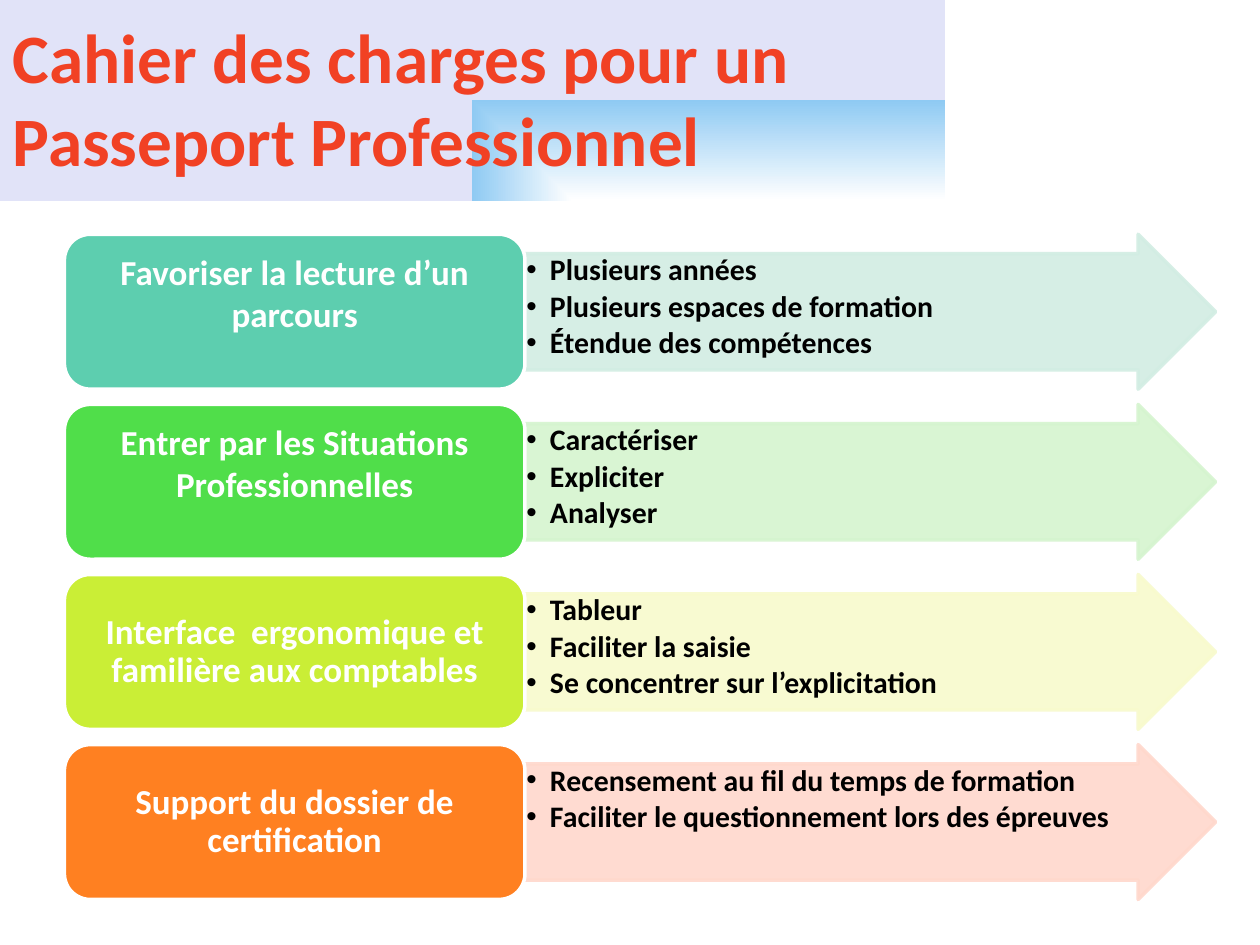
from lxml import etree
from pptx import Presentation
from pptx.dml.color import RGBColor
from pptx.enum import shapes, text
from pptx.oxml import parse_xml
from pptx.oxml.ns import nsdecls, qn
from pptx.util import Pt


def paint(fmt, color):
    """Set a solid colour on a fill."""
    fmt.solid()
    fmt.fore_color.rgb = RGBColor.from_string(color)


def write(para, words, size, color):
    run = para.add_run()
    run.text = words
    font = run.font
    font.name, font.size, font.bold = "Calibri", Pt(size), True
    paint(font.fill, color)


ROWS = [
    ("Favoriser la lecture d’un parcours", "5DCEAF", "D2EDE3", 1, 25,
     ["Plusieurs années", "Plusieurs espaces de formation", "Étendue des compétences"]),
    ("Entrer par les Situations Professionnelles", "50DE4A", "D5F4CF", 1, 25,
     ["Caractériser", "Expliciter", "Analyser"]),
    ("Interface  ergonomique et familière aux comptables", "CAEE36", "F8FACD", 0.9, 3,
     ["Tableur", "Faciliter la saisie", "Se concentrer sur l’explicitation"]),
    ("Support du dossier de certification", "FF8021", "FFD8CC", 0.9, 3,
     ["Recensement au fil du temps de formation",
      "Faciliter le questionnement lors des épreuves"]),
]
TOP, STEP, HIGH = 133.9, 97.2, 88.5

prs = Presentation()
prs.slide_width, prs.slide_height = Pt(720), Pt(540)
slide = prs.slides.add_slide(prs.slide_layouts[5])

# Title band, behind the title
band = slide.shapes.add_shape(shapes.MSO_SHAPE.RECTANGLE, 0, 0, Pt(540), Pt(114.7))
band.shadow.inherit = False
band.line.fill.background()
stops = [(0, "FFFFFF"), (100, "8FCAF3"), (100, "C1C7F2"), (100, "E1E3F8")]
marks = "".join(f'<a:gs pos="{pos * 1000}"><a:srgbClr val="{color}"/></a:gs>'
                for pos, color in stops)
band.fill.background()
empty = band.element.spPr.find(qn("a:noFill"))
empty.getparent().replace(empty, parse_xml(
    f'<a:gradFill {nsdecls("a")}><a:gsLst>{marks}</a:gsLst>'
    '<a:path path="rect"><a:fillToRect l="100000" t="100000"/></a:path></a:gradFill>'))
slide.shapes.element.insert(2, band.element)

title = slide.shapes.title
title.left, title.top, title.width, title.height = 0, 0, Pt(530), Pt(111.6)
frame = title.text_frame
frame.auto_size = text.MSO_AUTO_SIZE.NONE
frame.word_wrap = True
frame.vertical_anchor = text.MSO_ANCHOR.MIDDLE
para = frame.paragraphs[0]
para.alignment = text.PP_ALIGN.LEFT
write(para, "Cahier des charges pour un Passeport Professionnel", 39.6, "F14124")

for i, (label, dark, pale, lead, foot, items) in enumerate(ROWS):
    top = Pt(TOP + i * STEP)

    arrow = slide.shapes.add_shape(shapes.MSO_SHAPE.RIGHT_ARROW,
                                   Pt(300), top, Pt(394.6), Pt(HIGH))
    arrow.adjustments[0], arrow.adjustments[1] = 0.75, 0.5
    paint(arrow.fill, pale)
    paint(arrow.line.fill, pale)
    for tone in arrow.element.spPr.iter(qn("a:srgbClr")):
        etree.SubElement(tone, qn("a:alpha"), val="90000")
    frame = arrow.text_frame
    frame.vertical_anchor = text.MSO_ANCHOR.TOP
    frame.margin_left = frame.margin_right = Pt(0.8)
    frame.margin_top = frame.margin_bottom = Pt(0.8)
    for j, item in enumerate(items):
        para = frame.add_paragraph() if j else frame.paragraphs[0]
        para.alignment = text.PP_ALIGN.LEFT
        para.line_spacing, para.space_after = 0.9, Pt(2.5)
        props = para._p.get_or_add_pPr()
        props.set("marL", str(Pt(13.5)))
        props.set("indent", str(Pt(-13.5)))
        etree.SubElement(props, qn("a:buFont"), typeface="Arial")
        etree.SubElement(props, qn("a:buChar"), char="•")
        write(para, item, 17, "000000")

    box = slide.shapes.add_shape(shapes.MSO_SHAPE.ROUNDED_RECTANGLE,
                                 Pt(36.8), top, Pt(263.2), Pt(HIGH))
    paint(box.fill, dark)
    paint(box.line.fill, "FFFFFF")
    frame = box.text_frame
    frame.vertical_anchor = text.MSO_ANCHOR.MIDDLE
    frame.margin_left = frame.margin_right = Pt(6)
    frame.margin_top, frame.margin_bottom = Pt(3), Pt(foot)
    para = frame.paragraphs[0]
    para.alignment = text.PP_ALIGN.CENTER
    para.line_spacing = lead
    write(para, label, 20, "FFFFFF")

    for shape in (arrow, box):
        shape.shadow.inherit = False
        shape.line.width = Pt(2)
        shape.text_frame.word_wrap = True

prs.save("out.pptx")
